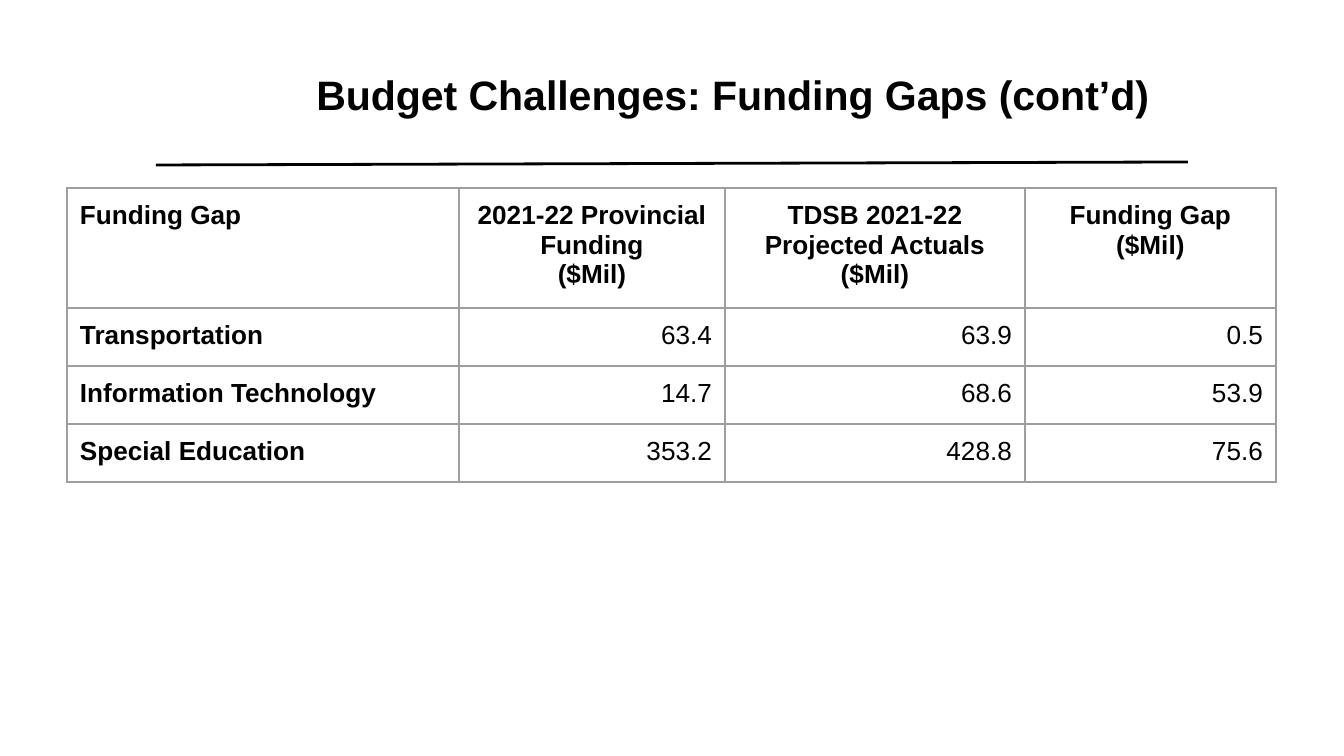
"""Build the funding gaps slide: a title, a rule and a table."""
from lxml.etree import SubElement
from pptx import Presentation
from pptx.dml.color import RGBColor
from pptx.enum.shapes import MSO_CONNECTOR
from pptx.enum.text import MSO_ANCHOR, PP_ALIGN
from pptx.oxml.ns import qn
from pptx.util import Pt

HUES = {"ink": "000000", "grid": "9E9E9E", "paper": "FFFFFF"}
TITLE = "Budget Challenges: Funding Gaps (cont’d)"
HEAD = ["Funding Gap", "2021-22 Provincial Funding\n($Mil)",
        "TDSB 2021-22 Projected Actuals ($Mil)", "Funding Gap ($Mil)"]
ROWS = [
    ["Transportation", "63.4", "63.9", "0.5"],
    ["Information Technology", "14.7", "68.6", "53.9"],
    ["Special Education", "353.2", "428.8", "75.6"],
]
SIZE = (1344, 756)
TITLE_BOX = (218, 23, 1054, 142)
RULE = (156, 165, 1188, 162)
TABLE_AT = (67, 188)
WIDTHS = [392, 266, 300, 251]
HEIGHTS = [115] + [58] * len(ROWS)
PAD = 13
INSETS = {"margin_left": PAD, "margin_right": PAD,
          "margin_top": PAD, "margin_bottom": PAD}
TITLE_INSETS = {**INSETS, "margin_right": 37}


def px(num):
    """Turn px into EMU."""
    return round(num * 914400 / 134.4)


def apply(item, values):
    """Set each attribute of the item."""
    for name, value in values.items():
        setattr(item, name, value)


def inset(item, sides):
    """Set the inner margins."""
    apply(item, {name: px(num) for name, num in sides.items()})


def style(frame, size, bold, align):
    """Format every paragraph of a text frame."""
    for para in frame.paragraphs:
        para.alignment = align
        apply(para.font, {"name": "Arial", "size": Pt(size), "bold": bold})
        para.font.color.rgb = RGBColor.from_string(HUES["ink"])


def border(cell):
    """Draw the four sides of a cell."""
    props = cell._tc.get_or_add_tcPr()
    for side in ("lnL", "lnR", "lnT", "lnB"):
        line = SubElement(props, qn(f"a:{side}"), w=str(Pt(0.75)))
        fill = SubElement(line, qn("a:solidFill"))
        SubElement(fill, qn("a:srgbClr"), val=HUES["grid"])


def add_title(slide):
    """Add the title."""
    frame = slide.shapes.add_textbox(*map(px, TITLE_BOX)).text_frame
    apply(frame, {"text": TITLE, "word_wrap": True,
                  "vertical_anchor": MSO_ANCHOR.MIDDLE})
    inset(frame, TITLE_INSETS)
    style(frame, 22, True, PP_ALIGN.CENTER)


def add_rule(slide):
    """Add the line below the title."""
    rule = slide.shapes.add_connector(MSO_CONNECTOR.STRAIGHT, *map(px, RULE))
    rule.line.color.rgb = RGBColor.from_string(HUES["ink"])
    rule.line.width = Pt(1.5)
    SubElement(rule._element.spPr, qn("a:effectLst"))


def add_grid(slide):
    """Add the table."""
    data = [HEAD] + ROWS
    box = (*TABLE_AT, sum(WIDTHS), sum(HEIGHTS))
    table = slide.shapes.add_table(len(data), len(HEAD), *map(px, box)).table
    apply(table, {"first_row": False, "horz_banding": False})
    for col, width in zip(table.columns, WIDTHS):
        col.width = px(width)
    for row, height in zip(table.rows, HEIGHTS):
        row.height = px(height)
    for r, texts in enumerate(data):
        for c, text in enumerate(texts):
            cell = table.cell(r, c)
            cell.text = text
            inset(cell, INSETS)
            border(cell)
            cell.fill.background()
            align = (PP_ALIGN.LEFT if c == 0 else
                     PP_ALIGN.CENTER if r == 0 else PP_ALIGN.RIGHT)
            style(cell.text_frame, 14, r == 0 or c == 0, align)


def main():
    """Build and save the deck."""
    deck = Presentation()
    apply(deck, dict(zip(("slide_width", "slide_height"), map(px, SIZE))))
    slide = deck.slides.add_slide(deck.slide_layouts[6])
    back = slide.background.fill
    back.solid()
    back.fore_color.rgb = RGBColor.from_string(HUES["paper"])
    add_title(slide)
    add_rule(slide)
    add_grid(slide)
    deck.save("out.pptx")


if __name__ == "__main__":
    main()
